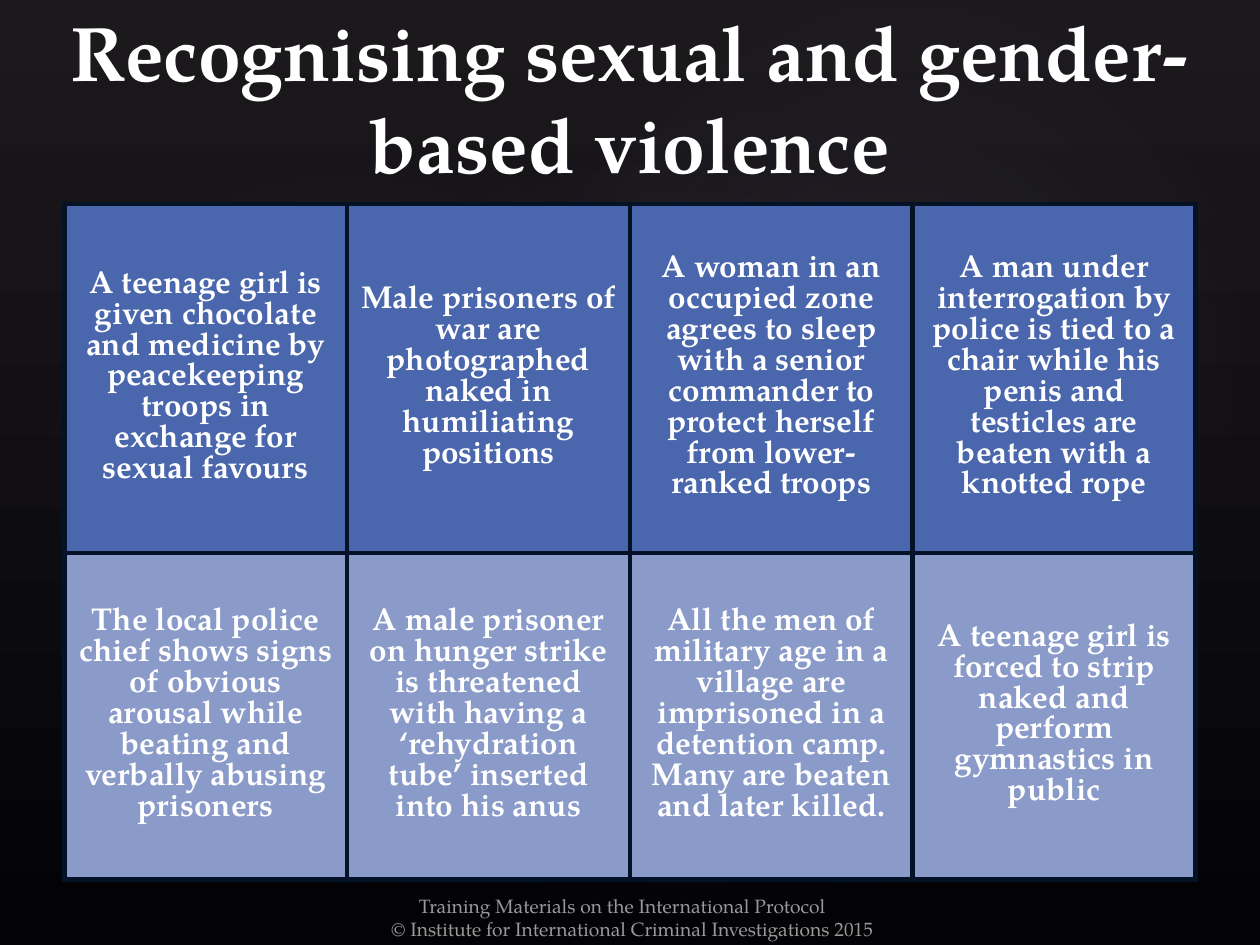
from lxml import etree
from pptx import Presentation
from pptx.dml.color import RGBColor
from pptx.enum.shapes import MSO_SHAPE
from pptx.enum.text import MSO_ANCHOR, PP_ALIGN
from pptx.oxml import parse_xml
from pptx.oxml.ns import nsdecls, qn
from pptx.util import Inches, Pt

OVAL = MSO_SHAPE.OVAL
MIDDLE, BOTTOM = MSO_ANCHOR.MIDDLE, MSO_ANCHOR.BOTTOM
CENTER = PP_ALIGN.CENTER
FONT = "TeX Gyre Pagella"
WHITE = RGBColor(0xFF, 0xFF, 0xFF)
GREY = RGBColor(0x99, 0x99, 0x99)
BLUE = RGBColor(0x4A, 0x66, 0xAC)
PALE = RGBColor(0x8A, 0x9B, 0xC9)
NAVY = RGBColor(0x03, 0x12, 0x27)
DUSK = RGBColor(0x1C, 0x19, 0x1D)
NIGHT = RGBColor(0x03, 0x03, 0x06)


def style(par, size, color, bold=False):
    par.alignment = CENTER
    for run in par.runs:
        run.font.name = FONT
        run.font.size = Pt(size)
        run.font.bold = bold
        run.font.color.rgb = color


def edge(cell):
    props = cell._tc.get_or_add_tcPr()
    for i, side in enumerate(("lnL", "lnR", "lnT", "lnB")):
        props.insert(i, parse_xml(
            f'<a:{side} {nsdecls("a")} w="{Pt(3)}"><a:solidFill>'
            f'<a:srgbClr val="{NAVY}"/></a:solidFill></a:{side}>'))


prs = Presentation()
prs.slide_width, prs.slide_height = Inches(10), Inches(7.5)
slide = prs.slides.add_slide(prs.slide_layouts[5])

# Dark background
fill = slide.background.fill
fill.gradient()
fill.gradient_angle = 270
for stop, color in zip(fill.gradient_stops, (DUSK, NIGHT)):
    stop.color.rgb = color

# Soft glows, placed behind the title
glows = [
    (1.5, 1.14, 7.92, 6.24, 328.7, 7),
    (-0.3, 1.28, 6.06, 4.9, 294.3, 8),
    (3.58, 0.13, 7.09, 5.2, 328.7, 8),
]
for i, (left, top, width, height, turn, alpha) in enumerate(glows):
    glow = slide.shapes.add_shape(
        OVAL, Inches(left), Inches(top), Inches(width), Inches(height))
    glow.rotation = turn
    glow.shadow.inherit = False
    glow.line.fill.background()
    glow.fill.gradient()
    grad = glow._element.spPr.find(qn("a:gradFill"))
    stops = zip(grad.find(qn("a:gsLst")),
                ((0, "C4BCC6", alpha), (58, "242852", 0)))
    for stop, (pos, color, part) in stops:
        stop.set("pos", str(pos * 1000))
        for child in list(stop):
            stop.remove(child)
        tint = etree.SubElement(stop, qn("a:srgbClr"), val=color)
        etree.SubElement(tint, qn("a:alpha"), val=str(part * 1000))
    grad.remove(grad.find(qn("a:lin")))
    grad.append(parse_xml(
        f'<a:path {nsdecls("a")} path="circle"><a:fillToRect l="50000" '
        't="50000" r="50000" b="50000"/></a:path>'))
    slide.shapes._spTree.insert(2 + i, glow._element)

# Title
title = slide.shapes.title
title.left, title.top = Inches(0), Inches(0.12)
title.width, title.height = Inches(10), Inches(1.43)
title.text_frame.text = "Recognising sexual and gender-based violence"
title.text_frame.vertical_anchor = BOTTOM
style(title.text_frame.paragraphs[0], 44, WHITE, True)

# Footer, its second line set slightly to the right
foot = slide.shapes.add_textbox(
    Inches(2.48), Inches(7.05), Inches(5.08), Inches(0.4)).text_frame
foot.word_wrap = True
foot.margin_right = Inches(0.26)
foot.text = ("Training Materials on the International Protocol\n"
             "© Institute for International Criminal Investigations 2015")
for par in foot.paragraphs:
    style(par, 11, GREY)
foot.paragraphs[1]._p.get_or_add_pPr().set("marL", str(Inches(0.16)))

# Table of cases
cases = [
    ["A teenage girl is given chocolate and medicine by peacekeeping troops "
     "in exchange for sexual favours",
     "Male prisoners of war are photographed naked in humiliating positions",
     "A woman in an occupied zone agrees to sleep with a senior commander to "
     "protect herself from lower-ranked troops",
     "A man under interrogation by police is tied to a chair while his penis "
     "and testicles are beaten with a knotted rope"],
    ["The local police chief shows signs of obvious arousal while beating "
     "and verbally abusing prisoners",
     "A male prisoner on hunger strike is threatened with having a "
     "‘rehydration tube’ inserted into his anus",
     "All the men of military age in a village are imprisoned in a detention "
     "camp. Many are beaten and later killed.",
     "A teenage girl is forced to strip naked and perform gymnastics in "
     "public"],
]
table = slide.shapes.add_table(
    2, 4, Inches(0.51), Inches(1.62), Inches(8.98), Inches(5.36)).table
for row, height, color, texts in zip(
        table.rows, (2.77, 2.59), (BLUE, PALE), cases):
    row.height = Inches(height)
    for cell, text in zip(row.cells, texts):
        cell.fill.solid()
        cell.fill.fore_color.rgb = color
        cell.vertical_anchor = MIDDLE
        edge(cell)
        cell.text_frame.text = text
        style(cell.text_frame.paragraphs[0], 18, WHITE, True)

prs.save("out.pptx")
